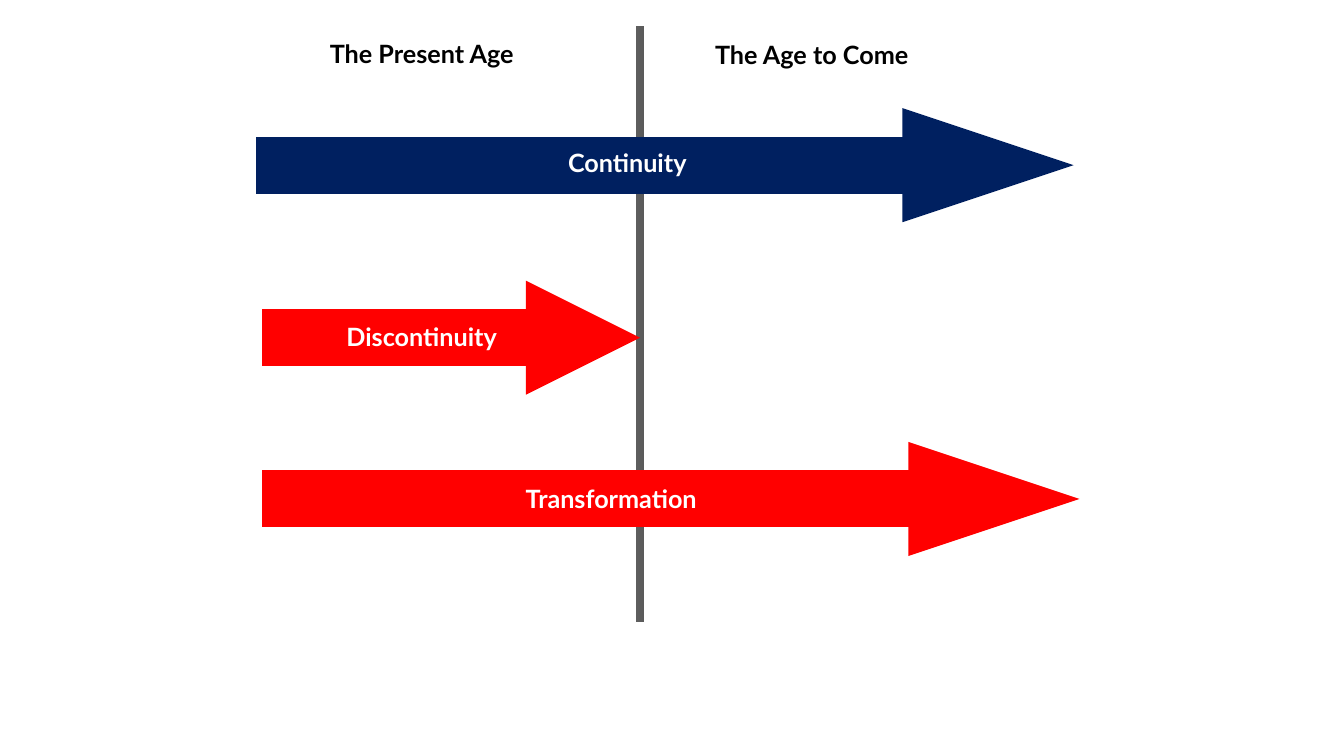
from lxml import etree
from pptx import Presentation
from pptx import util as u
from pptx.dml import color
from pptx.enum import shapes, text
from pptx.oxml import ns

NAVY, RED, BLACK, WHITE = "002060", "FF0000", "000000", "FFFFFF"
DIVIDER_X = 457.2
LABEL_WIDTH, LABEL_HEIGHT = 228, 29
FADE_STOPS = [(0, 0), (19, 38), (35, 77), (48, 100), (100, 100)]


def paint(target, hex_colour):
    target.rgb = color.RGBColor.from_string(hex_colour)


def add_line(slide, start, end, hex_colour, width):
    line = slide.shapes.add_connector(
        shapes.MSO_CONNECTOR.STRAIGHT, *(u.Pt(value) for value in start + end))
    paint(line.line.color, hex_colour)
    line.line.width = u.Pt(width)
    etree.SubElement(line.element.spPr, ns.qn("a:effectLst"))
    return line


def add_arrow(slide, left, right, middle, hex_colour, head_length):
    arrow = add_line(slide, (left, middle), (right, middle), hex_colour, 40.75)
    outline = arrow.element.spPr.find(ns.qn("a:ln"))
    etree.SubElement(outline, ns.qn("a:tailEnd"),
                     type="triangle", w="sm", len=head_length)


def add_fade(slide, width, height):
    fade = slide.shapes.add_shape(
        shapes.MSO_SHAPE.RECTANGLE, 0, 0, u.Pt(width), u.Pt(height))
    fade.shadow.inherit = False
    fade.line.fill.background()
    fade.fill.gradient()
    fade.fill.gradient_angle = 180
    stops = fade.element.spPr.find(".//" + ns.qn("a:gsLst"))
    for stop in list(stops):
        stops.remove(stop)
    for position, opacity in FADE_STOPS:
        stop = etree.SubElement(stops, ns.qn("a:gs"), pos=str(position * 1000))
        white = etree.SubElement(stop, ns.qn("a:srgbClr"), val=WHITE)
        etree.SubElement(white, ns.qn("a:alpha"), val=str(opacity * 1000))


def add_label(slide, wording, left, top, hex_colour):
    label = slide.shapes.add_textbox(
        u.Pt(left), u.Pt(top), u.Pt(LABEL_WIDTH), u.Pt(LABEL_HEIGHT))
    frame = label.text_frame
    frame.word_wrap = True
    frame.auto_size = text.MSO_AUTO_SIZE.SHAPE_TO_FIT_TEXT
    frame.text = wording
    paragraph = frame.paragraphs[0]
    paragraph.alignment = text.PP_ALIGN.CENTER
    font = paragraph.runs[0].font
    font.name, font.size, font.bold = "Lato", u.Pt(18), True
    paint(font.color, hex_colour)


def main():
    deck = Presentation()
    deck.slide_width, deck.slide_height = u.Pt(960), u.Pt(540)
    slide = deck.slides.add_slide(deck.slide_layouts[6])

    add_line(slide, (DIVIDER_X, 18.7), (DIVIDER_X, 444.2), BLACK, 5.25)
    add_fade(slide, 556.6, 540)

    add_arrow(slide, 182.9, 766.8, 118, NAVY, "med")
    add_arrow(slide, 187.2, 771.1, 356.4, RED, "med")
    add_arrow(slide, 187.2, DIVIDER_X, 241.2, RED, "sm")

    for wording, left, top, hex_colour in [
        ("The Present Age", 187.2, 23.8, BLACK),
        ("The Age to Come", 465.8, 24.5, BLACK),
        ("Continuity", 334.1, 101.5, WHITE),
        ("Discontinuity", 187.2, 226.1, WHITE),
        ("Transformation", 322.6, 342, WHITE),
    ]:
        add_label(slide, wording, left, top, hex_colour)

    deck.save("out.pptx")


if __name__ == "__main__":
    main()
